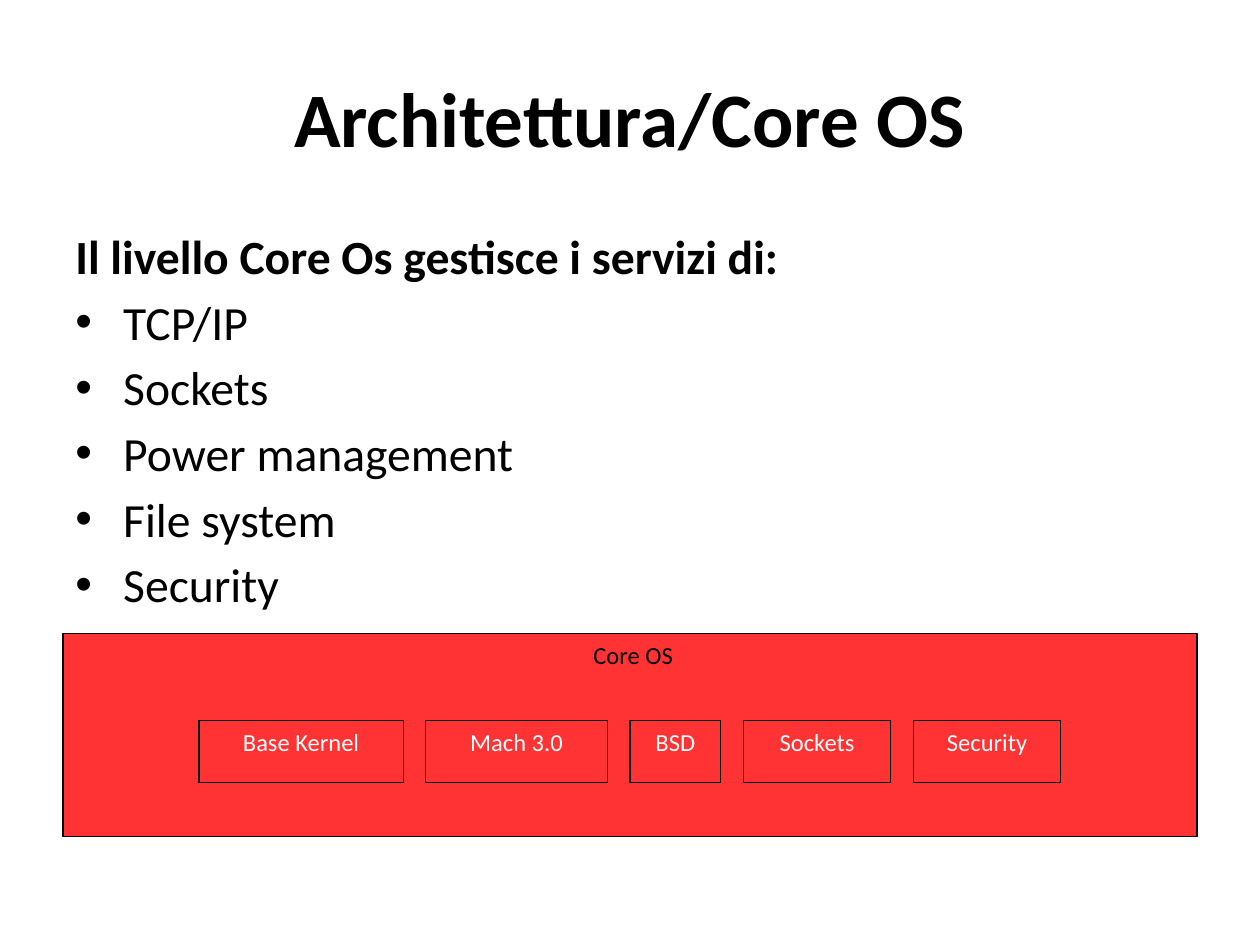
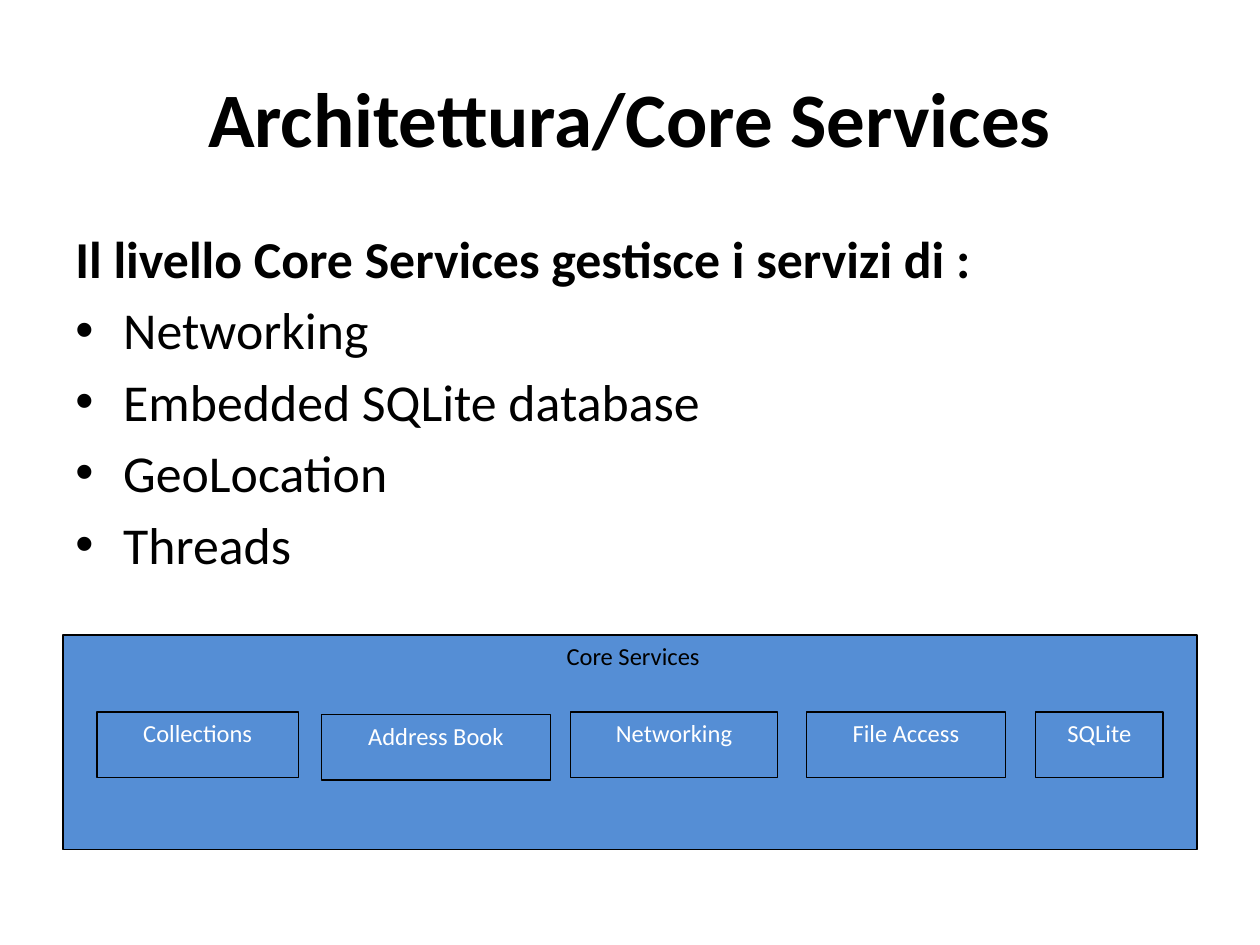
from dataclasses import dataclass
from typing import NamedTuple

from lxml.etree import SubElement
from pptx import Presentation
from pptx.dml.color import RGBColor
from pptx.enum.shapes import MSO_SHAPE
from pptx.enum.text import MSO_ANCHOR, PP_ALIGN
from pptx.oxml.ns import qn
from pptx.shapes.base import BaseShape
from pptx.shapes.shapetree import GroupShapes
from pptx.slide import Slide
from pptx.text.text import Font, TextFrame
from pptx.util import Inches, Pt


@dataclass(frozen=True)
class Theme:
    face: str = "Calibri"
    ink: RGBColor = RGBColor(0x00, 0x00, 0x00)
    pale: RGBColor = RGBColor(0xFF, 0xFF, 0xFF)
    red: RGBColor = RGBColor(0xFF, 0x00, 0x00)
    blue: RGBColor = RGBColor(0x55, 0x8E, 0xD5)
    title: float = 44
    label: float = 14
    line: float = 0.75
    indent: float = 0.38
    space: float = 0.18


THEME = Theme()


class Box(NamedTuple):
    left: float
    top: float
    width: float
    height: float


class Tile(NamedTuple):
    text: str
    width: float
    gap: float = 0.18
    drop: float = 0


@dataclass(frozen=True)
class Layer:
    name: str
    lead: str
    items: list[str]
    size: float
    body: Box
    panel: Box
    fill: RGBColor
    solid: int
    row: Box
    tiles: list[Tile]


LAYERS = [
    Layer(
        "Core OS", "Il livello Core Os gestisce i servizi di:",
        ["TCP/IP", "Sockets", "Power management", "File system", "Security"],
        27.2, Box(0.5, 1.75, 9, 2.94),
        Box(0.5, 5.03, 9, 1.61), THEME.red, 80,
        Box(1.58, 5.72, 6.84, 0.49),
        [Tile("Base Kernel", 1.62), Tile("Mach 3.0", 1.44), Tile("BSD", 0.72),
         Tile("Sockets", 1.17), Tile("Security", 1.17)],
    ),
    Layer(
        "Core Services", "Il livello Core Services gestisce i servizi di :",
        ["Networking", "Embedded SQLite database", "GeoLocation", "Threads"],
        29.6, Box(0.5, 1.75, 9, 2.87),
        Box(0.5, 5.04, 9, 1.7), THEME.blue, 100,
        Box(0.77, 5.65, 8.46, 0.52),
        [Tile("Collections", 1.6), Tile("Address Book", 1.82, 0.16, 0.02),
         Tile("Networking", 1.64, 0.23), Tile("File Access", 1.58, 0.24),
         Tile("SQLite", 1.01)],
    ),
]


def place(box: Box) -> list[int]:
    return [Inches(side) for side in box]


def style(font: Font, size: float, ink: RGBColor, bold: bool = False) -> None:
    font.name = THEME.face
    font.size = Pt(size)
    font.color.rgb = ink
    font.bold = bold


def label(frame: TextFrame, text: str, ink: RGBColor) -> None:
    frame.word_wrap = True
    frame.vertical_anchor = MSO_ANCHOR.TOP
    para = frame.paragraphs[0]
    para.text = text
    para.alignment = PP_ALIGN.CENTER
    style(para.font, THEME.label, ink)


def frame(shapes: GroupShapes, box: Box) -> BaseShape:
    shape = shapes.add_shape(MSO_SHAPE.RECTANGLE, *place(box))
    shape.shadow.inherit = False
    shape.fill.background()
    shape.line.color.rgb = THEME.ink
    shape.line.width = Pt(THEME.line)
    return shape


def tint(shape: BaseShape, fill: RGBColor, solid: int) -> None:
    shape.fill.solid()
    shape.fill.fore_color.rgb = fill
    if solid < 100:
        color = shape.fill._xPr.find(qn("a:solidFill")).find(qn("a:srgbClr"))
        SubElement(color, qn("a:alpha"), val=str(solid * 1000))


def head(slide: Slide, text: str) -> None:
    title = slide.shapes.title
    title.left, title.top, title.width, title.height = place(Box(0.5, 0.3, 9, 1.25))
    title.text_frame.vertical_anchor = MSO_ANCHOR.MIDDLE
    para = title.text_frame.paragraphs[0]
    para.text = text
    para.alignment = PP_ALIGN.CENTER
    style(para.font, THEME.title, THEME.ink, True)


def points(slide: Slide, layer: Layer) -> None:
    text = slide.shapes.add_textbox(*place(layer.body)).text_frame
    text.word_wrap = True
    for rank, line in enumerate([layer.lead, *layer.items]):
        para = text.add_paragraph() if rank else text.paragraphs[0]
        para.text = line
        props = para._p.get_or_add_pPr()
        props.set("marL", str(Inches(THEME.indent)))
        props.set("indent", str(-Inches(THEME.indent)))
        if rank:
            para.space_before = Pt(round(layer.size * THEME.space, 1))
            SubElement(props, qn("a:buFont"), typeface="Arial")
            SubElement(props, qn("a:buChar"), char="•")
        style(para.font, layer.size, THEME.ink, rank == 0)


def stack(slide: Slide, layer: Layer) -> None:
    shapes = slide.shapes.add_group_shape().shapes
    tint(frame(shapes, layer.panel), layer.fill, layer.solid)
    left = layer.row.left
    for tile in layer.tiles:
        box = Box(left, layer.row.top + tile.drop, tile.width, layer.row.height)
        label(frame(shapes, box).text_frame, tile.text, THEME.pale)
        left += tile.width + tile.gap
    name = shapes.add_textbox(*place(Box(4.08, layer.panel.top, 1.89, 0.34)))
    label(name.text_frame, layer.name, THEME.ink)


def main() -> None:
    deck = Presentation()
    deck.slide_width, deck.slide_height = Inches(10), Inches(7.5)
    for layer in LAYERS:
        slide = deck.slides.add_slide(deck.slide_layouts[5])
        head(slide, f"Architettura/{layer.name}")
        points(slide, layer)
        stack(slide, layer)
    deck.save("out.pptx")


if __name__ == "__main__":
    main()
